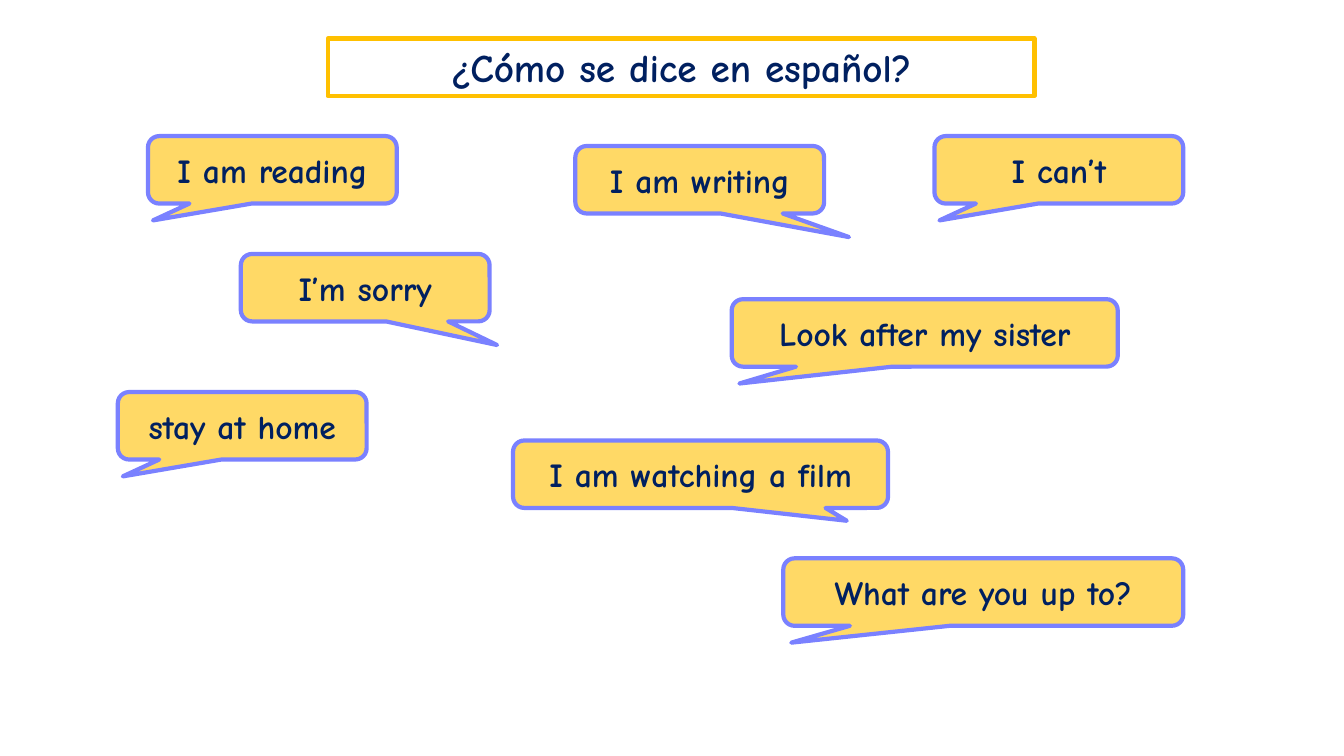
from dataclasses import dataclass

from pptx import Presentation
from pptx.dml.color import RGBColor
from pptx.enum.shapes import MSO_SHAPE
from pptx.enum.text import MSO_ANCHOR, PP_ALIGN
from pptx.util import Cm, Pt

RECT = MSO_SHAPE.RECTANGLE
BUBBLE = MSO_SHAPE.ROUNDED_RECTANGULAR_CALLOUT
MIDDLE = MSO_ANCHOR.MIDDLE
CENTER = PP_ALIGN.CENTER


@dataclass(frozen=True)
class Theme:
    font: str = "Comic Neue"
    ink: str = "002060"
    paper: str = "FFFFFF"
    gold: str = "FFC000"
    sand: str = "FFD966"
    violet: str = "7A81FF"
    title: int = 28
    body: int = 24
    line: int = 3


class Board:
    def __init__(self, slide, theme):
        self.slide = slide
        self.theme = theme

    def panel(self, kind, box, text, size, fill, edge):
        """Add a filled, outlined shape with one centred line of bold text."""
        shape = self.slide.shapes.add_shape(kind, *map(Cm, box))
        shape.shadow.inherit = False
        shape.fill.solid()
        shape.fill.fore_color.rgb = RGBColor.from_string(fill)
        shape.line.color.rgb = RGBColor.from_string(edge)
        shape.line.width = Pt(self.theme.line)
        frame = shape.text_frame
        frame.text = text
        frame.word_wrap = True
        frame.vertical_anchor = MIDDLE
        para = frame.paragraphs[0]
        para.alignment = CENTER
        font = para.runs[0].font
        font.name = self.theme.font
        font.size = Pt(size)
        font.bold = True
        font.color.rgb = RGBColor.from_string(self.theme.ink)
        return shape

    def title(self, text, box):
        look = self.theme
        self.panel(RECT, box, text, look.title, look.paper, look.gold)

    def bubble(self, text, left, top, width, tail):
        """Add a speech bubble; tail is its tip, as shares of the size from the centre."""
        look = self.theme
        box = (left, top, width, HEIGHT)
        shape = self.panel(BUBBLE, box, text, look.body, look.sand, look.violet)
        shape.adjustments[0], shape.adjustments[1] = tail


HEIGHT = 1.7
SHORT = 6.27
LEFT = (-0.48, 0.75)

PHRASES = [
    ("I am reading", 3.73, 3.43, SHORT, LEFT),
    ("I am writing", 14.5, 3.68, SHORT, (0.6, 0.85)),
    ("I’m sorry", 6.07, 6.4, SHORT, (0.53, 0.85)),
    ("I can’t", 23.55, 3.43, SHORT, LEFT),
    ("stay at home", 2.97, 9.88, SHORT, LEFT),
    ("Look after my sister", 18.44, 7.54, 9.73, LEFT),
    ("I am watching a film", 12.93, 11.1, 9.45, (0.39, 0.69)),
    ("What are you up to?", 19.74, 14.07, 10.08, LEFT),
]


def main():
    deck = Presentation()
    deck.slide_width = Cm(33.87)
    deck.slide_height = Cm(19.05)
    board = Board(deck.slides.add_slide(deck.slide_layouts[6]), Theme())
    board.title("¿Cómo se dice en español?", (8.26, 0.97, 17.81, 1.45))
    for phrase in PHRASES:
        board.bubble(*phrase)
    deck.save("out.pptx")


if __name__ == "__main__":
    main()
